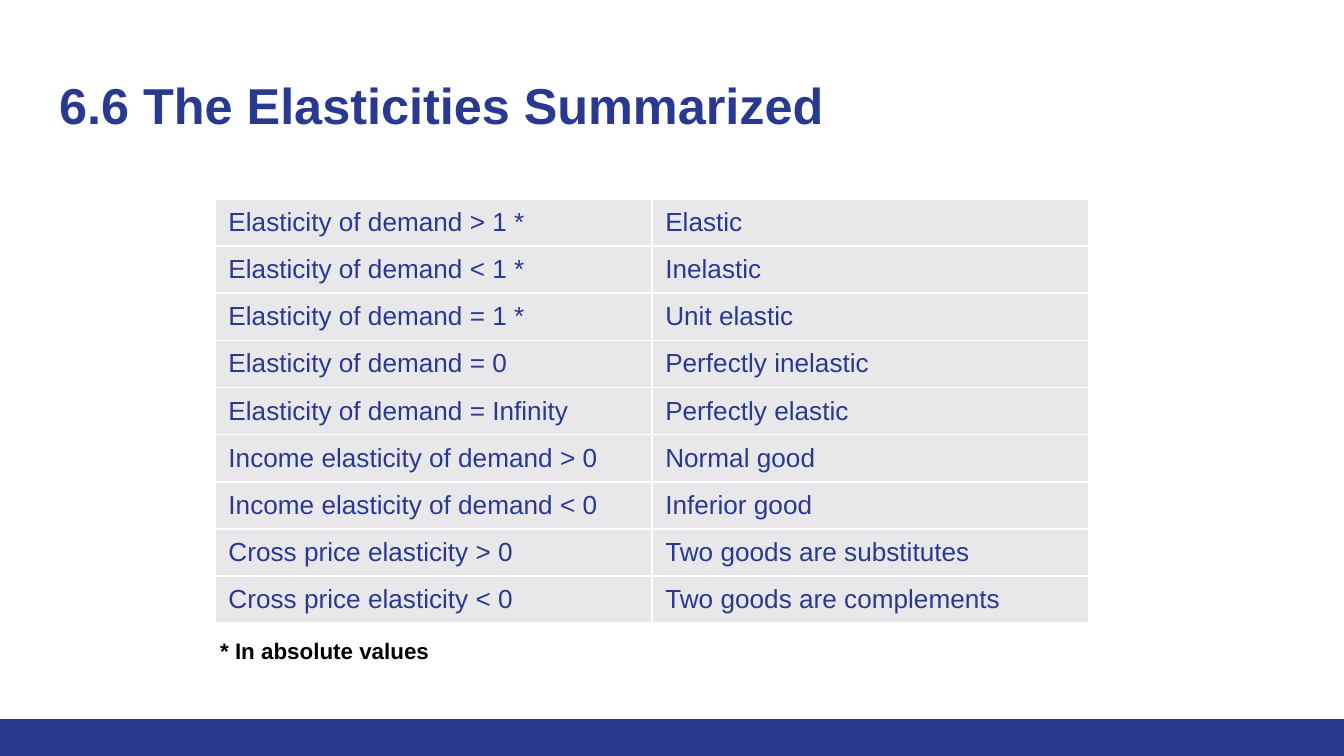
from lxml.etree import SubElement
from pptx import Presentation
from pptx.dml.color import RGBColor
from pptx.enum.shapes import MSO_SHAPE
from pptx.enum.text import MSO_ANCHOR, MSO_AUTO_SIZE, PP_ALIGN
from pptx.oxml.ns import qn
from pptx.util import Inches, Pt

# Content
TITLE = "6.6 The Elasticities Summarized"
ELASTICITIES = [
    ("Elasticity of demand > 1 *", "Elastic"),
    ("Elasticity of demand < 1 *", "Inelastic"),
    ("Elasticity of demand = 1 *", "Unit elastic"),
    ("Elasticity of demand = 0", "Perfectly inelastic"),
    ("Elasticity of demand = Infinity", "Perfectly elastic"),
    ("Income elasticity of demand > 0", "Normal good"),
    ("Income elasticity of demand < 0", "Inferior good"),
    ("Cross price elasticity > 0", "Two goods are substitutes"),
    ("Cross price elasticity < 0", "Two goods are complements"),
]
FOOTNOTE = "* In absolute values"

# Style
FONT = "Arial"
NAVY = RGBColor(0x2A, 0x39, 0x90)
PALE_GREY = RGBColor(0xE8, 0xE8, 0xEB)
WHITE = RGBColor(0xFF, 0xFF, 0xFF)
BLACK = RGBColor(0x00, 0x00, 0x00)


def write(frame, text, *, size, color=NAVY, bold=False):
    paragraph = frame.paragraphs[0]
    paragraph.alignment = PP_ALIGN.LEFT
    run = paragraph.add_run()
    run.text = text
    run.font.name = FONT
    run.font.size = Pt(size)
    run.font.bold = bold
    run.font.color.rgb = color


def add_borders(cell, color, width):
    """Call before the cell is filled: borders precede the fill in the XML."""
    properties = cell._tc.get_or_add_tcPr()
    for side in ("lnL", "lnR", "lnT", "lnB"):
        line = SubElement(properties, qn(f"a:{side}"), w=str(Pt(width)))
        fill = SubElement(line, qn("a:solidFill"))
        SubElement(fill, qn("a:srgbClr"), val=str(color))


# Slide in 16:9
deck = Presentation()
deck.slide_width = Inches(10)
deck.slide_height = deck.slide_width * 9 // 16
slide = deck.slides.add_slide(deck.slide_layouts.get_by_name("Title Only"))

# Bottom band, down to the slide's edge
band_top = Inches(5.35)
band = slide.shapes.add_shape(
    MSO_SHAPE.RECTANGLE, 0, band_top,
    deck.slide_width, deck.slide_height - band_top)
band.shadow.inherit = False
band.fill.solid()
band.fill.fore_color.rgb = NAVY
band.line.fill.background()

# Title
title = slide.shapes.title
title.left, title.top = Inches(0.34), Inches(0.45)
title.width, title.height = Inches(9.32), Inches(0.66)
heading = title.text_frame
heading.margin_left = heading.margin_right = Inches(0.1)
heading.margin_top = heading.margin_bottom = Inches(0.1)
heading.vertical_anchor = MSO_ANCHOR.MIDDLE
heading.auto_size = MSO_AUTO_SIZE.NONE
write(heading, TITLE, size=27, bold=True)

# Table of elasticities
summary = slide.shapes.add_table(
    len(ELASTICITIES), len(ELASTICITIES[0]),
    Inches(1.6), Inches(1.48), Inches(6.5), Inches(3.16)).table
summary.first_row = summary.horz_banding = False
for row, entries in enumerate(ELASTICITIES):
    for column, entry in enumerate(entries):
        cell = summary.cell(row, column)
        add_borders(cell, WHITE, 1)
        cell.fill.solid()
        cell.fill.fore_color.rgb = PALE_GREY
        cell.vertical_anchor = MSO_ANCHOR.MIDDLE
        write(cell.text_frame, entry, size=14)

# Footnote
footnote = slide.shapes.add_textbox(
    Inches(1.54), Inches(4.69), Inches(1.83), Inches(0.3)).text_frame
footnote.word_wrap = True
footnote.auto_size = MSO_AUTO_SIZE.SHAPE_TO_FIT_TEXT
write(footnote, FOOTNOTE, size=12, color=BLACK, bold=True)

deck.save("out.pptx")
